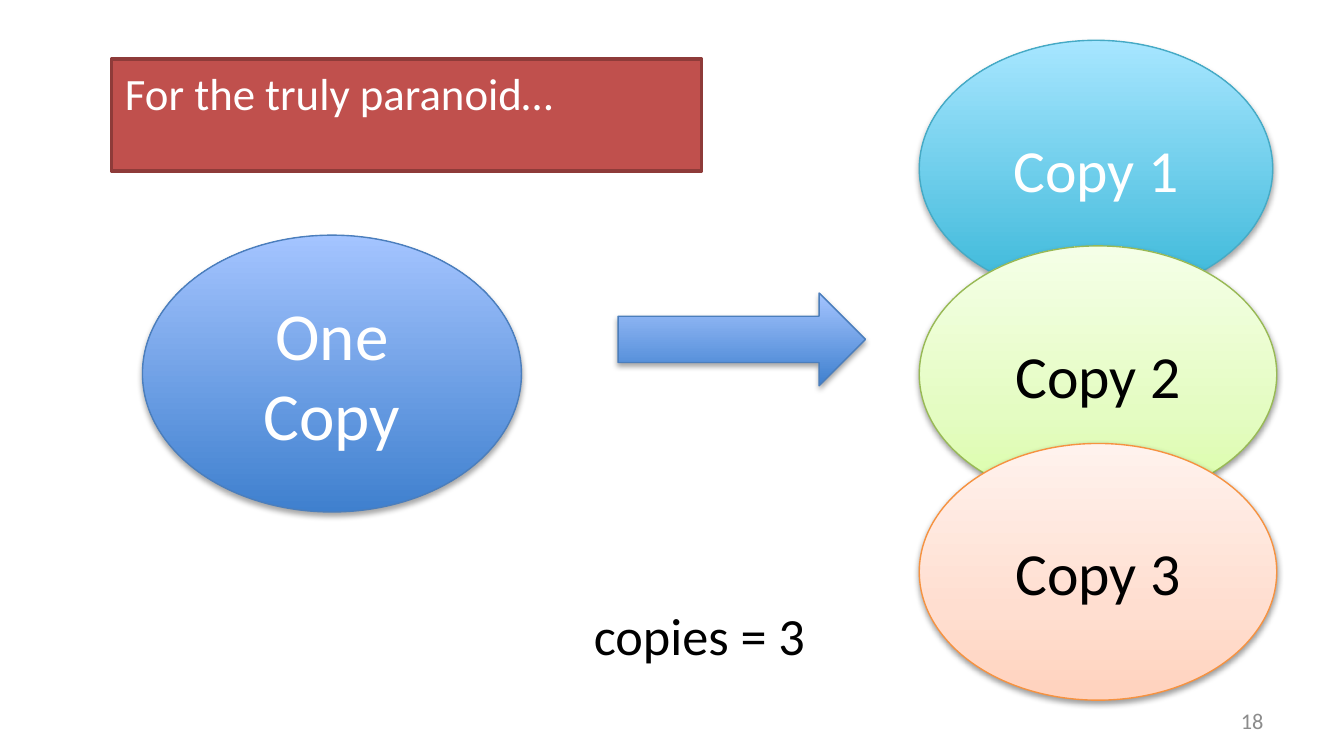
from lxml.etree import SubElement
from pptx import Presentation
from pptx.dml.color import RGBColor
from pptx.enum.shapes import MSO_SHAPE as Shape
from pptx.enum.text import MSO_ANCHOR as Anchor, MSO_AUTO_SIZE as AutoSize, PP_ALIGN as Align
from pptx.oxml.ns import qn
from pptx.util import Inches, Pt

COLORS = {
    "white": "FFFFFF", "black": "000000", "gray": "8C8C8C",
    "red": "C0504D", "red line": "8E3B39", "blue line": "4B7EBC",
    "aqua line": "46AAC5", "green line": "98B955", "orange line": "F69240",
}
# Gradient stops run from the bottom of a shape to its top
GRADIENTS = {
    "blue": {0: "3F80CE", 100: "A4C4FF"},
    "aqua": {0: "39B7D8", 100: "A7E6FF"},
    "green": {0: "DAFDA7", 35: "E4FCC2", 100: "F5FFE7"},
    "orange": {0: "FFD2BD", 35: "FFDED0", 100: "FFF2ED"},
}

presentation = Presentation()
presentation.slide_width, presentation.slide_height = Inches(10), Inches(5.625)
COLUMN = presentation.slide_width / 100
ROW = presentation.slide_height / 100
slide = presentation.slides.add_slide(presentation.slide_layouts[5])


def write(shape, text, size, color, align, anchor, wrap=True, auto_size=AutoSize.NONE):
    frame = shape.text_frame
    frame.text = text
    paragraph = frame.paragraphs[0]
    paragraph.alignment = align
    frame_format = {"word_wrap": wrap, "auto_size": auto_size, "vertical_anchor": anchor}
    for name, value in frame_format.items():
        setattr(frame, name, value)
    font = paragraph.runs[0].font
    for name, value in {"name": "Calibri", "size": Pt(size)}.items():
        setattr(font, name, value)
    font.color.rgb = RGBColor.from_string(COLORS[color])


def add_glossy(kind, left, top, width, height, hue):
    """Add a shape with a vertical gradient, a thin outline and a soft shadow."""
    shape = slide.shapes.add_shape(
        kind, int(left * COLUMN), int(top * ROW), int(width * COLUMN), int(height * ROW))
    shape.fill.gradient()
    shape.fill.gradient_angle = 90
    properties = shape._element.spPr
    stops = properties.find(".//" + qn("a:gsLst"))
    for stop in list(stops):
        stops.remove(stop)
    for position, color in GRADIENTS[hue].items():
        stop = SubElement(stops, qn("a:gs"), pos=str(position * 1000))
        SubElement(stop, qn("a:srgbClr"), val=color)
    shape.line.color.rgb = RGBColor.from_string(COLORS[f"{hue} line"])
    shape.line.width = Pt(0.75)

    # Pale shapes cast a slightly closer, denser shadow
    distance, opacity = (1.6, 38) if len(GRADIENTS[hue]) == 3 else (1.8, 35)
    shape.shadow.inherit = False
    shadow = SubElement(
        properties.find(qn("a:effectLst")), qn("a:outerShdw"), blurRad=str(Pt(3.1)),
        dist=str(Pt(distance)), dir="5400000", rotWithShape="0")
    shadow_color = SubElement(shadow, qn("a:srgbClr"), val=COLORS["black"])
    SubElement(shadow_color, qn("a:alpha"), val=str(opacity * 1000))
    return shape


# Title banner
title = slide.shapes.title
banner = {"left": 8.3 * COLUMN, "top": 7.82 * ROW, "width": 43.9 * COLUMN, "height": 8.98 * ROW}
for name, value in banner.items():
    setattr(title, name, int(value))
title.fill.solid()
title.fill.fore_color.rgb = RGBColor.from_string(COLORS["red"])
title.line.color.rgb = RGBColor.from_string(COLORS["red line"])
title.line.width = Pt(2)
write(title, "For the truly paranoid…", 24, "white", Align.LEFT, Anchor.TOP,
      auto_size=AutoSize.SHAPE_TO_FIT_TEXT)

# Single copy and the arrow to its replicas
single = add_glossy(Shape.OVAL, 10.6, 31.11, 28.2, 36.62, "blue")
write(single, "One Copy", 36, "white", Align.CENTER, Anchor.MIDDLE)
add_glossy(Shape.RIGHT_ARROW, 46, 38.76, 18.4, 12.27, "blue")

# Overlapping stack of copies
copies = [(5.33, 26.3, "aqua", "white"), (32.53, 26.6, "green", "black"),
          (58.67, 26.6, "orange", "black")]
for number, (top, width, hue, color) in enumerate(copies, start=1):
    oval = add_glossy(Shape.OVAL, 68.4, top, width, 33.96, hue)
    write(oval, f"Copy {number}", 32, color, Align.CENTER, Anchor.MIDDLE)

# Caption and slide number
labels = [
    ((43.2, 78.93, 17.9, 10.13), ("copies = 3", 28, "black", Align.LEFT, Anchor.TOP, False,
                                  AutoSize.SHAPE_TO_FIT_TEXT)),
    ((71.7, 92.62, 23.3, 5.33), ("18", 12, "gray", Align.RIGHT, Anchor.MIDDLE)),
]
for (left, top, width, height), text_format in labels:
    label = slide.shapes.add_textbox(
        int(left * COLUMN), int(top * ROW), int(width * COLUMN), int(height * ROW))
    write(label, *text_format)

presentation.save("out.pptx")
